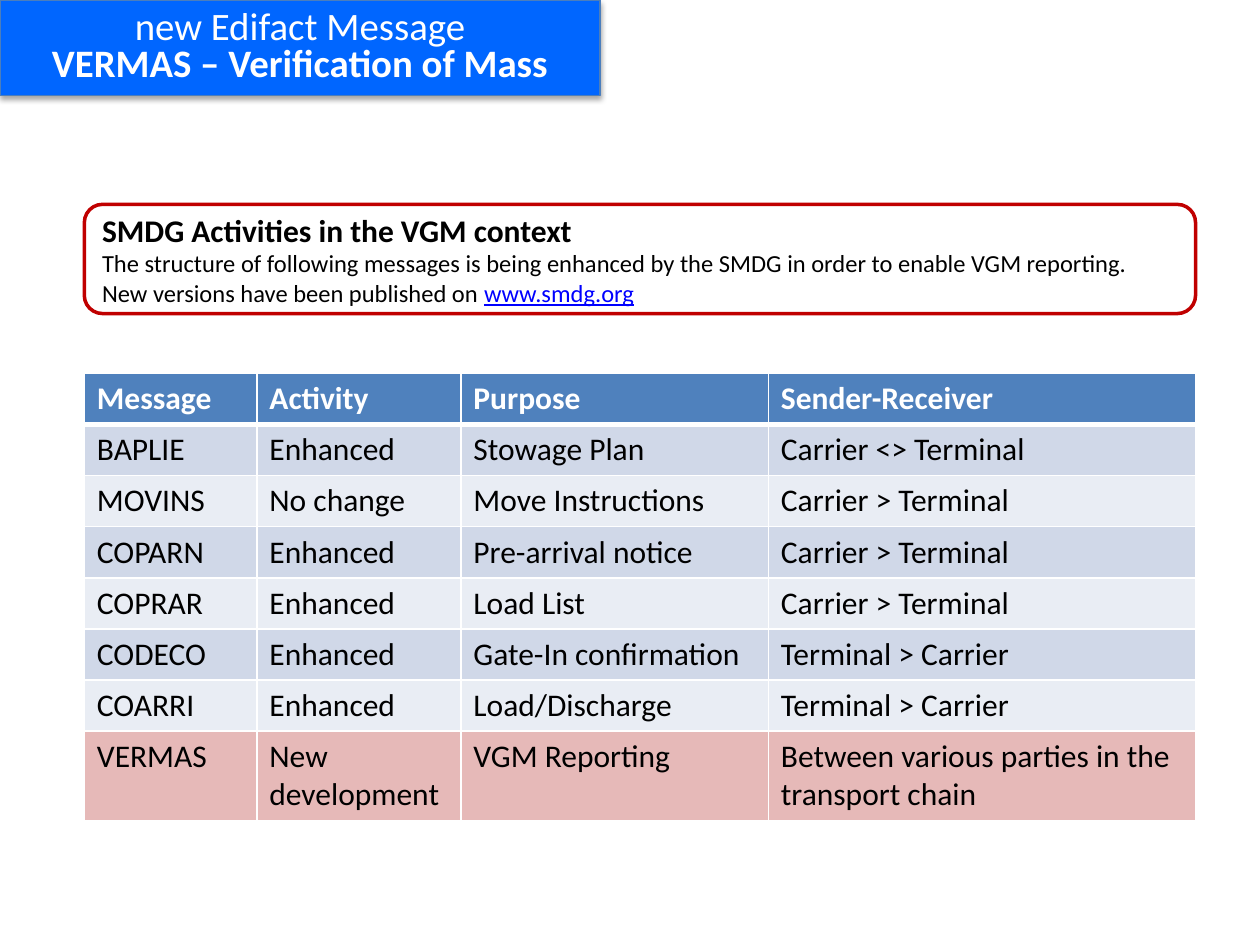
from lxml.etree import SubElement
from pptx import Presentation
from pptx.dml.color import RGBColor as RGB
from pptx.enum.shapes import MSO_SHAPE as Shape
from pptx.enum.text import MSO_ANCHOR as Anchor, PP_ALIGN as Align
from pptx.oxml.ns import qn
from pptx.util import Pt

COLORS = {
    "white": "FFFFFF", "black": "000000", "link": "0000FF",
    "banner": "0066FF", "edge": "4B7EBC", "frame": "C00000",
    "head": "4F81BD", "band": "D0D8E8", "pale": "E9EDF4", "new": "E6B9B8",
}
WIDTHS = (98.6, 116.6, 175.7, 244.1)
ROW = 29.2
ROWS = (
    ("Message", "Activity", "Purpose", "Sender-Receiver"),
    ("BAPLIE", "Enhanced", "Stowage Plan", "Carrier <> Terminal"),
    ("MOVINS", "No change", "Move Instructions", "Carrier > Terminal"),
    ("COPARN", "Enhanced", "Pre-arrival notice", "Carrier > Terminal"),
    ("COPRAR", "Enhanced", "Load List", "Carrier > Terminal"),
    ("CODECO", "Enhanced", "Gate-In confirmation", "Terminal > Carrier"),
    ("COARRI", "Enhanced", "Load/Discharge", "Terminal > Carrier"),
    ("VERMAS", "New development", "VGM Reporting",
     "Between various parties in the transport chain"),
)


def color(name):
    return RGB.from_string(COLORS[name])


def style(run, size, tint="black", bold=False):
    font = run.font
    font.name, font.size, font.bold = "Calibri", Pt(size), bold
    font.color.rgb = color(tint)


def add_box(slide, kind, box, fill, line, width):
    shape = slide.shapes.add_shape(kind, *map(Pt, box))
    shape.shadow.inherit = False
    shape.fill.solid()
    shape.fill.fore_color.rgb = color(fill)
    shape.line.color.rgb = color(line)
    shape.line.width = Pt(width)
    shape.text_frame.word_wrap = True
    shape.text_frame.vertical_anchor = Anchor.MIDDLE
    return shape


def add_shadow(shape):
    effects = shape._element.spPr.find(qn("a:effectLst"))
    outer = SubElement(effects, qn("a:outerShdw"), blurRad=str(Pt(3.1)),
                       dist=str(Pt(1.8)), dir="5400000", rotWithShape="0")
    tint = SubElement(outer, qn("a:srgbClr"), val=COLORS["black"])
    SubElement(tint, qn("a:alpha"), val="35000")


def add_title(slide, box):
    shape = add_box(slide, Shape.RECTANGLE, box, "banner", "edge", 0.75)
    add_shadow(shape)
    para = shape.text_frame.paragraphs[0]
    para.text = "new Edifact Message\vVERMAS – Verification of Mass"
    para.alignment, para.line_spacing = Align.CENTER, 0.8
    for run, bold in zip(para.runs, (False, True)):
        style(run, 22.2, "white", bold)


def add_note(slide, box):
    shape = add_box(slide, Shape.ROUNDED_RECTANGLE, box, "white", "frame", 2)
    frame = shape.text_frame
    frame.text = (
        "SMDG Activities in the VGM context\n"
        "The structure of following messages is being enhanced by the SMDG "
        "in order to enable VGM reporting.\v"
        "New versions have been published on ")
    head, body = frame.paragraphs
    head.alignment = body.alignment = Align.LEFT
    style(head.runs[0], 18, bold=True)
    for run in body.runs:
        style(run, 14)
    site = body.add_run()
    site.text = "www.smdg.org"
    style(site, 14, "link")
    site.font.underline = True


def add_borders(cell, row):
    """Draw white rules, thicker between the header and the body."""
    widths = {"L": 1, "R": 1, "T": 3 if row == 1 else 1,
              "B": 3 if row == 0 else 1}
    props = cell._tc.get_or_add_tcPr()
    for side, width in widths.items():
        line = SubElement(props, qn(f"a:ln{side}"), w=str(Pt(width)))
        fill = SubElement(line, qn("a:solidFill"))
        SubElement(fill, qn("a:srgbClr"), val=COLORS["white"])


def row_fill(row):
    if row == 0:
        return "head"
    if row == len(ROWS) - 1:
        return "new"
    return "band" if row % 2 else "pale"


def add_grid(slide, left, top):
    table = slide.shapes.add_table(
        len(ROWS), len(WIDTHS), Pt(left), Pt(top),
        Pt(sum(WIDTHS)), Pt(ROW * len(ROWS))).table
    for col, width in zip(table.columns, WIDTHS):
        col.width = Pt(width)
    for r, texts in enumerate(ROWS):
        table.rows[r].height = Pt(ROW)
        for c, text in enumerate(texts):
            cell = table.cell(r, c)
            add_borders(cell, r)
            cell.fill.solid()
            cell.fill.fore_color.rgb = color(row_fill(r))
            cell.text_frame.text = text
            style(cell.text_frame.paragraphs[0].runs[0], 18,
                  "black" if r else "white", r == 0)


def main():
    deck = Presentation()
    deck.slide_width, deck.slide_height = Pt(720), Pt(540)
    slide = deck.slides.add_slide(deck.slide_layouts[6])
    add_note(slide, (48.2, 116.8, 635, 62.4))
    add_grid(slide, 48.2, 213.4)
    add_title(slide, (0, 0, 343, 54.7))
    deck.save("out.pptx")


if __name__ == "__main__":
    main()
